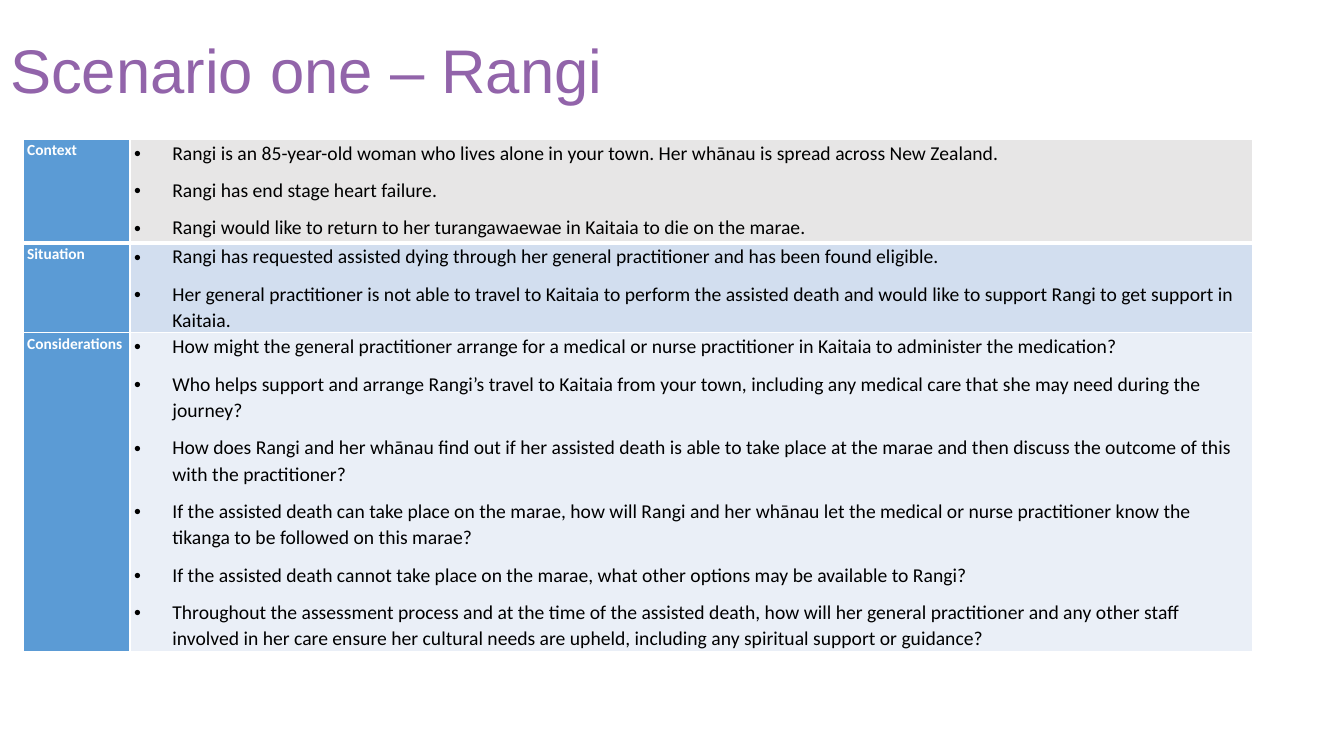
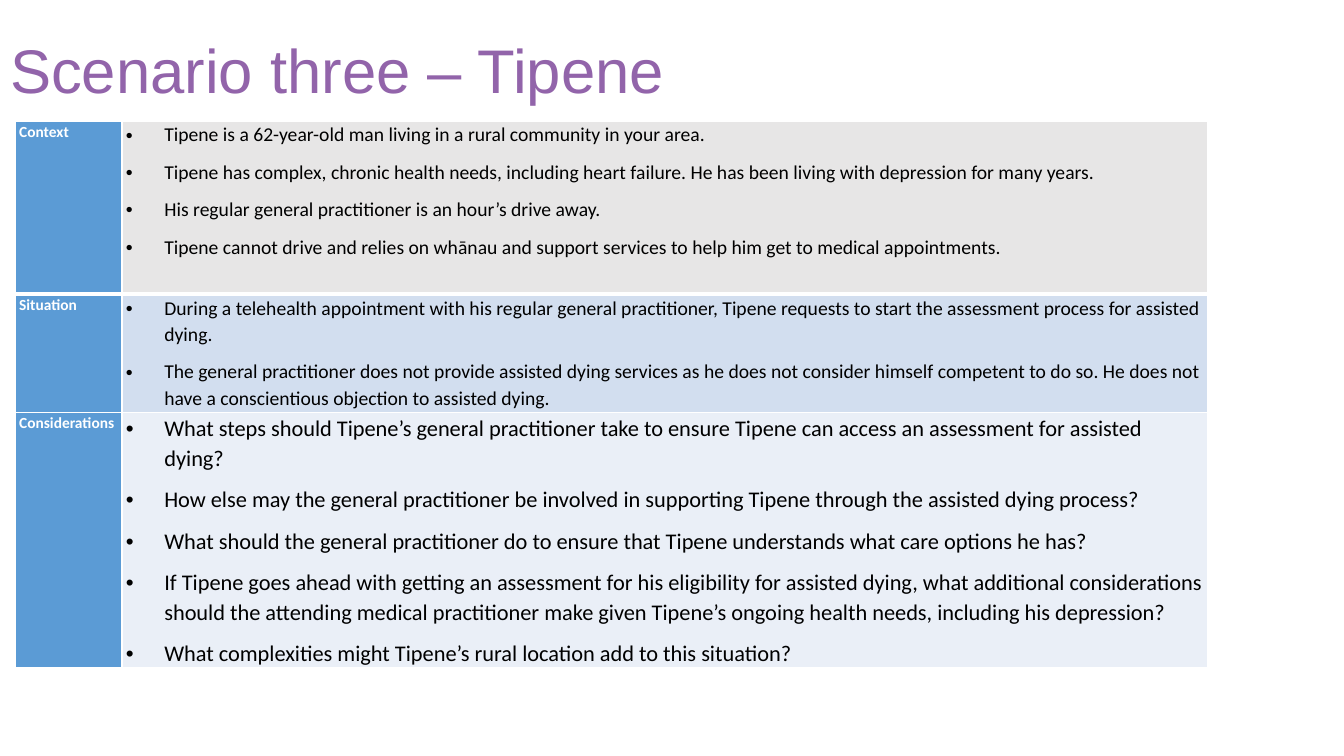
from lxml import etree
from pptx import Presentation
from pptx.dml.color import RGBColor
from pptx.enum.text import MSO_ANCHOR, MSO_AUTO_SIZE, PP_ALIGN
from pptx.oxml.ns import qn
from pptx.util import Inches, Pt

LEFT = PP_ALIGN.LEFT
MIDDLE = MSO_ANCHOR.MIDDLE
NO_AUTOFIT = MSO_AUTO_SIZE.NONE
TITLE_ONLY = 5

PURPLE, BLUE, WHITE, BLACK = "9264AA", "5B9BD5", "FFFFFF", "000000"
ROW_FILLS = ["E7E6E6", "D2DEEF", "EAEFF7"]
ROW_LABELS = ["Context", "Situation", "Considerations"]
LABEL_WIDTH = 1.06
BULLET_INDENT = 0.38

SCENARIOS = [
    {
        "title": "Scenario one – Rangi",
        "box": (0.23, 1.38, 12.19),
        "heights": [1.03, 0.88, 3.1],
        "sizes": [14, 14, 14],
        "rows": [
            [
                "Rangi is an 85-year-old woman who lives alone in your town. Her whānau is spread across New Zealand.",
                "Rangi has end stage heart failure.",
                "Rangi would like to return to her turangawaewae in Kaitaia to die on the marae.",
            ],
            [
                "Rangi has requested assisted dying through her general practitioner and has been found eligible.",
                "Her general practitioner is not able to travel to Kaitaia to perform the assisted death and would "
                "like to support Rangi to get support in Kaitaia.",
            ],
            [
                "How might the general practitioner arrange for a medical or nurse practitioner in Kaitaia to "
                "administer the medication?",
                "Who helps support and arrange Rangi’s travel to Kaitaia from your town, including any medical care "
                "that she may need during the journey?",
                "How does Rangi and her whānau find out if her assisted death is able to take place at the marae and "
                "then discuss the outcome of this with the practitioner?",
                "If the assisted death can take place on the marae, how will Rangi and her whānau let the medical or "
                "nurse practitioner know the tikanga to be followed on this marae?",
                "If the assisted death cannot take place on the marae, what other options may be available to Rangi?",
                "Throughout the assessment process and at the time of the assisted death, how will her general "
                "practitioner and any other staff involved in her care ensure her cultural needs are upheld, "
                "including any spiritual support or guidance?",
            ],
        ],
    },
    {
        "title": "Scenario three – Tipene",
        "box": (0.15, 1.2, 11.83),
        "heights": [1.72, 1.17, 2.36],
        "sizes": [14, 14, 16],
        "rows": [
            [
                "Tipene is a 62-year-old man living in a rural community in your area.",
                "Tipene has complex, chronic health needs, including heart failure. He has been living with "
                "depression for many years.",
                "His regular general practitioner is an hour’s drive away.",
                "Tipene cannot drive and relies on whānau and support services to help him get to medical "
                "appointments.",
            ],
            [
                "During a telehealth appointment with his regular general practitioner, Tipene requests to start "
                "the assessment process for assisted dying.",
                "The general practitioner does not provide assisted dying services as he does not consider himself "
                "competent to do so. He does not have a conscientious objection to assisted dying.",
            ],
            [
                "What steps should Tipene’s general practitioner take to ensure Tipene can access an assessment for "
                "assisted dying?",
                "How else may the general practitioner be involved in supporting Tipene through the assisted dying "
                "process?",
                "What should the general practitioner do to ensure that Tipene understands what care options he has?",
                "If Tipene goes ahead with getting an assessment for his eligibility for assisted dying, what "
                "additional considerations should the attending medical practitioner make given Tipene’s ongoing "
                "health needs, including his depression?",
                "What complexities might Tipene’s rural location add to this situation?",
            ],
        ],
    },
]


def color(hex_value):
    return RGBColor.from_string(hex_value)


def style_font(font, name, size, hex_value, bold=False):
    font.name = name
    font.size = Pt(size)
    font.bold = bold
    font.color.rgb = color(hex_value)


def add_bullet(paragraph):
    properties = paragraph._p.get_or_add_pPr()
    properties.set("marL", str(Inches(BULLET_INDENT)))
    properties.set("indent", str(-Inches(BULLET_INDENT)))
    etree.SubElement(properties, qn("a:buFont"), typeface="Arial")
    etree.SubElement(properties, qn("a:buChar"), char="•")


def set_borders(cell, top, bottom):
    """Draw white borders; widths of the top and bottom ones are in points."""
    properties = cell._tc.get_or_add_tcPr()
    for side, width in (("L", 1), ("R", 1), ("T", top), ("B", bottom)):
        line = etree.SubElement(properties, qn(f"a:ln{side}"), w=str(Pt(width)))
        fill = etree.SubElement(line, qn("a:solidFill"))
        etree.SubElement(fill, qn("a:srgbClr"), val=WHITE)


def fill_cell(cell, texts, fill, size, hex_value, bold=False, bulleted=False):
    cell.margin_left = cell.margin_right = Inches(0.04)
    cell.margin_top = cell.margin_bottom = 0
    cell.fill.solid()
    cell.fill.fore_color.rgb = color(fill)
    text_frame = cell.text_frame
    text_frame.text = "\n".join(texts)
    for index, paragraph in enumerate(text_frame.paragraphs):
        if bulleted:
            add_bullet(paragraph)
        paragraph.line_spacing = 1.1
        paragraph.space_before = Pt(4 if index else 0)
        paragraph.space_after = Pt(4)
        for run in paragraph.runs:
            style_font(run.font, "Calibri", size, hex_value, bold)


def add_title(slide, text):
    title = slide.shapes.title
    title.left, title.top = 0, 0
    title.width, title.height = Inches(11.5), Inches(1.45)
    text_frame = title.text_frame
    text_frame.text = text
    text_frame.auto_size = NO_AUTOFIT
    text_frame.vertical_anchor = MIDDLE
    paragraph = text_frame.paragraphs[0]
    paragraph.alignment = LEFT
    paragraph.line_spacing = 0.9
    style_font(paragraph.runs[0].font, "Arial", 44, PURPLE)


def add_scenario_table(slide, box, heights, sizes, rows):
    left, top, width = box
    table = slide.shapes.add_table(
        len(rows), 2, Inches(left), Inches(top), Inches(width), Inches(sum(heights))
    ).table
    table.first_row = table.horz_banding = False
    table.columns[0].width = Inches(LABEL_WIDTH)
    table.columns[1].width = Inches(width - LABEL_WIDTH)
    for index, texts in enumerate(rows):
        table.rows[index].height = Inches(heights[index])
        label, content = table.cell(index, 0), table.cell(index, 1)
        for cell in (label, content):
            set_borders(cell, top=3 if index == 1 else 1, bottom=3 if index == 0 else 1)
        fill_cell(label, [ROW_LABELS[index]], BLUE, 11, WHITE, bold=True)
        fill_cell(content, texts, ROW_FILLS[index], sizes[index], BLACK, bulleted=True)


def add_scenario_slide(presentation, scenario):
    slide = presentation.slides.add_slide(presentation.slide_layouts[TITLE_ONLY])
    add_title(slide, scenario["title"])
    add_scenario_table(
        slide, scenario["box"], scenario["heights"], scenario["sizes"], scenario["rows"]
    )


def main():
    presentation = Presentation()
    presentation.slide_width = Inches(13.33)
    presentation.slide_height = Inches(7.5)
    for scenario in SCENARIOS:
        add_scenario_slide(presentation, scenario)
    presentation.save("out.pptx")


if __name__ == "__main__":
    main()
